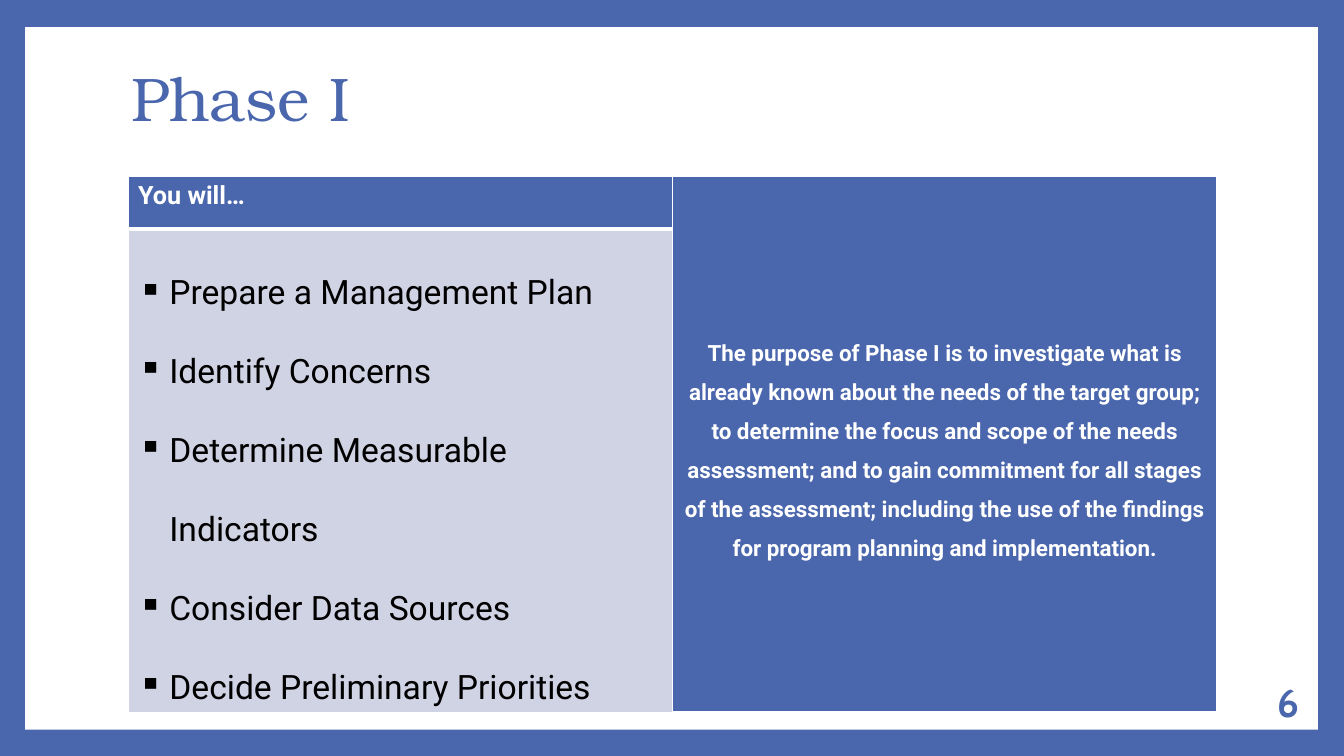
from lxml.etree import SubElement
from pptx import Presentation
from pptx.dml.color import RGBColor
from pptx.enum.shapes import MSO_SHAPE
from pptx.enum.text import MSO_ANCHOR, MSO_AUTO_SIZE, PP_ALIGN
from pptx.oxml import parse_xml
from pptx.oxml.ns import nsdecls, qn
from pptx.util import Inches, Pt

COLORS = {"blue": "4A66AC", "white": "FFFFFF", "pale": "D0D3E3", "black": "000000"}

STEPS = [
    "Prepare a Management Plan",
    "Identify Concerns",
    "Determine Measurable Indicators",
    "Consider Data Sources",
    "Decide Preliminary Priorities",
]
PURPOSE = (
    "The purpose of Phase I is to investigate what is already known about the needs "
    "of the target group; to determine the focus and scope of the needs assessment; "
    "and to gain commitment for all stages of the assessment; including the use of "
    "the findings for program planning and implementation."
)


class PhasePage:
    """Holds the deck's text styles and the current slide."""

    styles = {
        "title": {"name": "TeX Gyre Bonum", "size": Pt(44), "bold": False, "color": "blue"},
        "header": {"name": "Roboto", "size": Pt(18), "bold": True, "color": "white"},
        "purpose": {"name": "Roboto", "size": Pt(16), "bold": True, "color": "white"},
        "step": {"name": "Roboto", "size": Pt(24), "bold": False, "color": "black"},
        "number": {"name": "Cabin", "size": Pt(28), "bold": True, "color": "blue"},
    }

    def __init__(self, deck):
        self.page = deck.slides.add_slide(deck.slide_layouts[5])
        self.paint(self.page.background.fill, "blue")

    def paint(self, fill, color):
        fill.solid()
        fill.fore_color.rgb = RGBColor.from_string(COLORS[color])

    def add_text(self, frame, lines, style, bullet=None, **paragraph_format):
        frame.word_wrap = True
        for index, line in enumerate(lines):
            paragraph = frame.add_paragraph() if index else frame.paragraphs[0]
            for name, value in paragraph_format.items():
                setattr(paragraph, name, value)
            if bullet:
                self.add_bullet(paragraph, bullet)
            span = paragraph.add_run()
            span.text = line
            for name, value in self.styles[style].items():
                if name == "color":
                    span.font.color.rgb = RGBColor.from_string(COLORS[value])
                else:
                    setattr(span.font, name, value)

    def add_bullet(self, paragraph, character):
        properties = paragraph._p.get_or_add_pPr()
        indent = Inches(0.31)
        properties.set("marL", str(indent))
        properties.set("indent", str(-indent))
        SubElement(properties, qn("a:buChar")).set("char", character)

    def add_panel(self, *place):
        panel = self.page.shapes.add_shape(MSO_SHAPE.RECTANGLE, *map(Inches, place))
        panel.shadow.inherit = False
        self.paint(panel.fill, "white")
        panel.line.fill.background()
        # The panel lies behind the title placeholder
        self.page.shapes._spTree.insert(2, panel._element)

    def add_title(self, text, *place):
        title = self.page.shapes.title
        for name, value in zip(("left", "top", "width", "height"), place):
            setattr(title, name, Inches(value))
        frame = title.text_frame
        frame.auto_size = MSO_AUTO_SIZE.NONE
        frame.vertical_anchor = MSO_ANCHOR.MIDDLE
        self.add_text(frame, [text], "title", alignment=PP_ALIGN.LEFT, line_spacing=0.9)

    def add_number(self, text, *place):
        box = self.page.shapes.add_textbox(*map(Inches, place))
        box.text_frame.vertical_anchor = MSO_ANCHOR.MIDDLE
        self.add_text(box.text_frame, [text], "number", alignment=PP_ALIGN.RIGHT)

    def add_table(self, row_heights, *place):
        table = self.page.shapes.add_table(len(row_heights), 2, *map(Inches, place)).table
        for row, height in zip(table.rows, row_heights):
            row.height = Inches(height)
        return table

    def dress_cell(self, cell, color, bottom_width):
        """Fill a cell and give it white borders, the bottom one in its own width."""
        self.paint(cell.fill, color)
        widths = {"lnL": 1, "lnR": 1, "lnT": 1, "lnB": bottom_width}
        for index, (side, width) in enumerate(widths.items()):
            border = parse_xml(
                f'<a:{side} {nsdecls("a")} w="{Pt(width)}"><a:solidFill>'
                f'<a:srgbClr val="{COLORS["white"]}"/></a:solidFill></a:{side}>'
            )
            cell._tc.get_or_add_tcPr().insert(index, border)


def main():
    deck = Presentation()
    deck.slide_width, deck.slide_height = Inches(13.33), Inches(7.5)
    phase = PhasePage(deck)
    phase.add_panel(0.25, 0.27, 12.82, 6.97)
    phase.add_title("Phase I", 1.2, 0.27, 10.8, 1.48)

    table = phase.add_table([0.52, 4.33], 1.27, 1.75, 10.8, 4.85)
    header, purpose, steps = table.cell(0, 0), table.cell(0, 1), table.cell(1, 0)
    purpose.merge(table.cell(1, 1))
    phase.dress_cell(header, "blue", 3)
    phase.dress_cell(purpose, "blue", 3)
    phase.dress_cell(steps, "pale", 1)
    purpose.vertical_anchor = MSO_ANCHOR.MIDDLE
    phase.add_text(header.text_frame, ["You will…"], "header")
    phase.add_text(purpose.text_frame, [PURPOSE], "purpose",
                   alignment=PP_ALIGN.CENTER, line_spacing=1.5)
    phase.add_text(steps.text_frame, STEPS, "step", bullet="▪", line_spacing=2.0)

    phase.add_number("6", 11.11, 6.76, 1.87, 0.4)
    deck.save("out.pptx")


if __name__ == "__main__":
    main()
